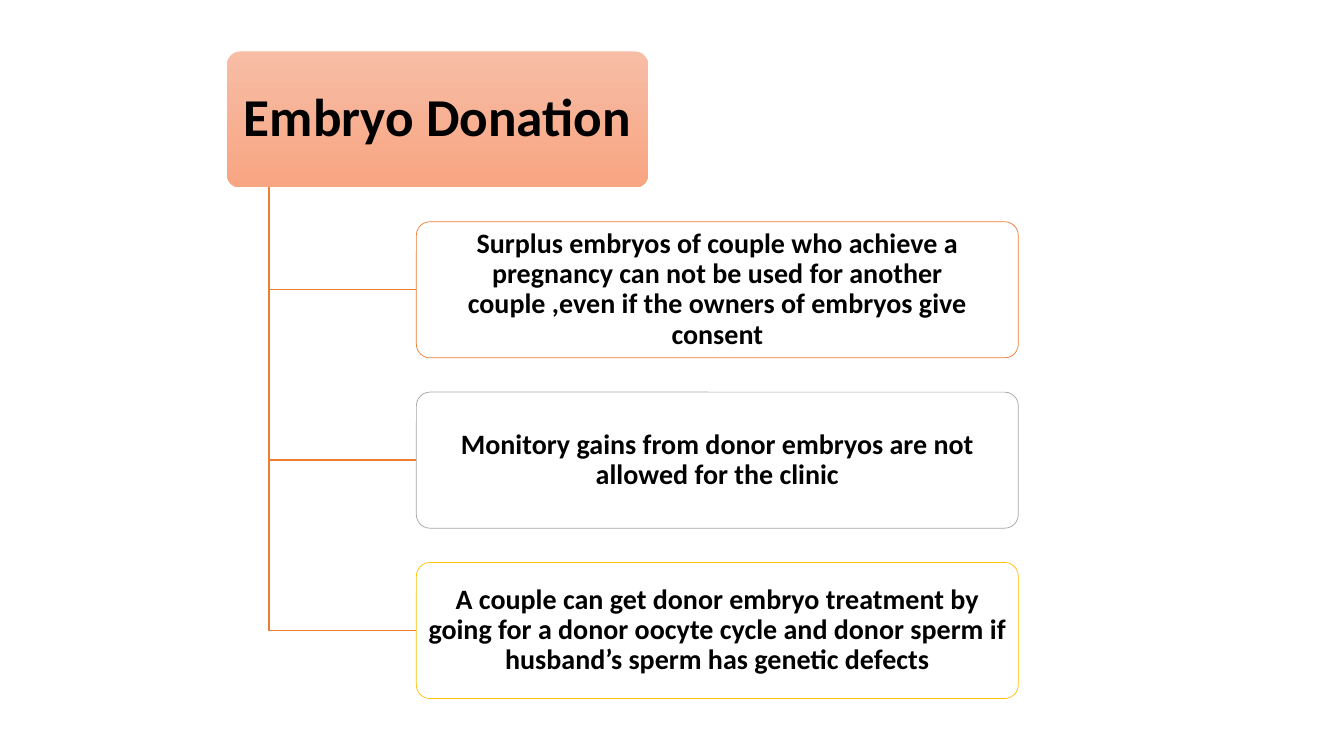
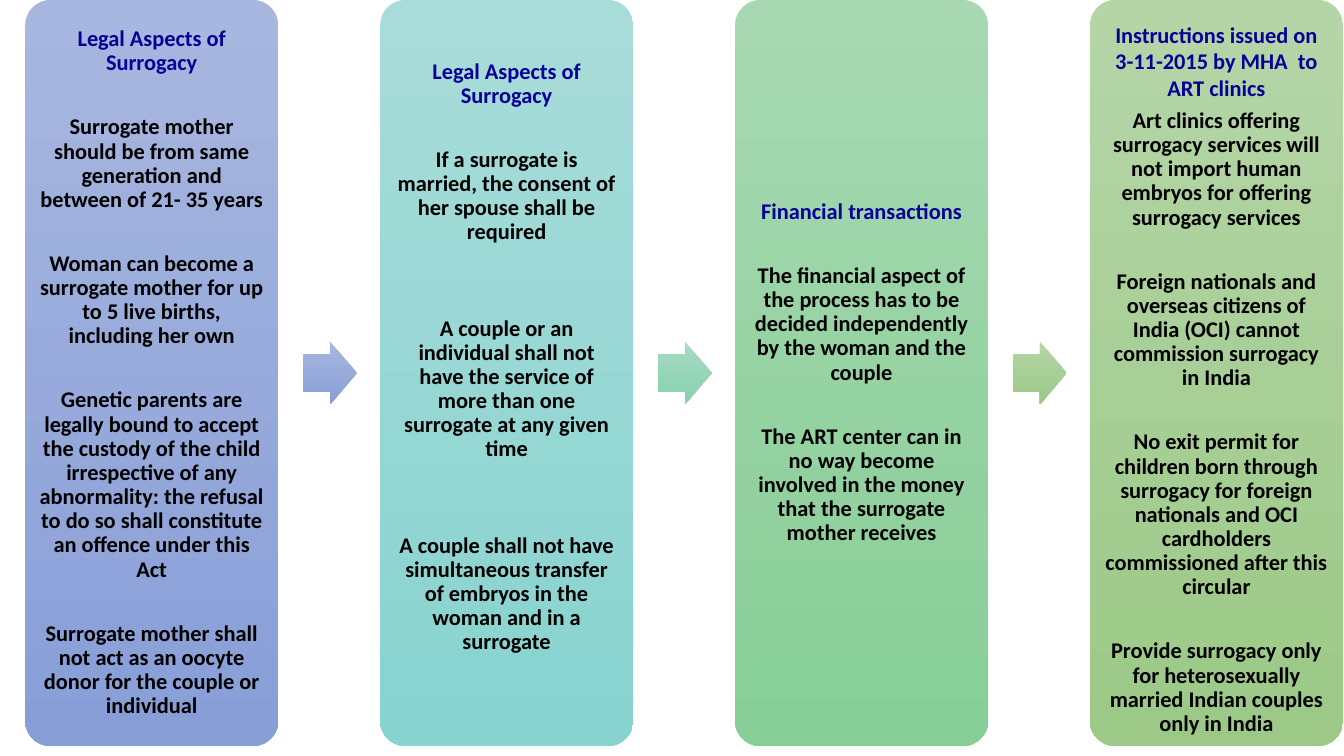
from pptx import Presentation
from pptx.dml.color import RGBColor
from pptx.enum.shapes import MSO_SHAPE
from pptx.enum.text import MSO_ANCHOR, PP_ALIGN
from pptx.util import Inches, Pt

FONT = "Calibri"
BLACK, WHITE, NAVY, ORANGE = "000000", "FFFFFF", "080198", "ED7D31"
PEACH = ("F7BDA5", "F8A582")
BLUE = ("A8B7DF", "889ED7")
TEAL = ("A8DCD9", "87D3CF")
MINT = ("A8DAC3", "87D1AF")
GREEN = ("A7D8B1", "87CE96")
OLIVE = ("B5D5A7", "9CC987")
CORNER = 0.1
TIGHT, SINGLE_GAP, DOUBLE_GAP = 5.6, 28.5, 51.5  # points between paragraphs

DONATION_TITLE = "Embryo Donation"
DONATION_RULES = [
    ("Surplus embryos of couple who achieve a pregnancy can not be used for another "
     "couple ,even if the owners of embryos give consent", ORANGE),
    ("Monitory gains from donor embryos are not allowed for the clinic", "A5A5A5"),
    ("A couple can get donor embryo treatment by going for a donor oocyte cycle and "
     "donor sperm if husband’s sperm has genetic defects", "FFC000"),
]

# heading_gap and gap are in points, top and bottom are panel insets in inches
SURROGACY_PANELS = [
    dict(colors=BLUE, heading="Legal Aspects of Surrogacy", heading_spacing=0.9,
         heading_gap=SINGLE_GAP, gap=SINGLE_GAP, top=0.07, bottom=0.07,
         points=[
             "Surrogate mother should be from same generation and between of 21- 35 years",
             "Woman can become a surrogate mother for up to 5 live births, "
             "including her own",
             "Genetic parents are legally bound to accept the custody of the child "
             "irrespective of any abnormality: the refusal to do so shall constitute "
             "an offence under this Act",
             "Surrogate mother shall not act as an oocyte donor for the couple or "
             "individual",
         ]),
    dict(colors=TEAL, heading="Legal Aspects of Surrogacy", heading_spacing=0.9,
         heading_gap=SINGLE_GAP, gap=DOUBLE_GAP, top=0.07, bottom=0.38,
         points=[
             "If a surrogate is married, the consent of her spouse shall be required",
             "A couple or an individual shall not have the service of more than one "
             "surrogate at any given time",
             "A couple shall not have simultaneous transfer of embryos in the woman "
             "and in a surrogate",
         ]),
    dict(colors=GREEN, heading="Financial transactions", heading_spacing=0.9,
         heading_gap=SINGLE_GAP, gap=SINGLE_GAP, top=0.07, bottom=0.07,
         points=[
             "The financial aspect of the process has to be decided independently by "
             "the woman and the couple",
             "The ART center can in no way become involved in the money that the "
             "surrogate mother receives",
         ]),
    dict(colors=OLIVE, heading="Instructions issued on 3-11-2015 by MHA  to ART clinics",
         heading_spacing=1.0, heading_gap=TIGHT, gap=SINGLE_GAP, top=0.11, bottom=0,
         points=[
             "Art clinics offering surrogacy services will not import human embryos "
             "for offering surrogacy services",
             "Foreign nationals and overseas citizens of India (OCI) cannot commission "
             "surrogacy in India",
             "No exit permit for children born through surrogacy for foreign nationals "
             "and OCI cardholders commissioned after this circular",
             "Provide surrogacy only for heterosexually married Indian couples only "
             "in India",
         ]),
]
ARROW_COLORS = [BLUE, MINT, OLIVE]


def rgb(color):
    return RGBColor.from_string(color)


def add_block(slide, kind, left, top, width, height, fill, outline=None):
    """Add a preset shape; fill is one colour or a (top, bottom) gradient pair."""
    block = slide.shapes.add_shape(
        kind, Inches(left), Inches(top), Inches(width), Inches(height))
    block.shadow.inherit = False
    if isinstance(fill, tuple):
        block.fill.gradient()
        block.fill.gradient_angle = 270
        for stop, color in zip(block.fill.gradient_stops, fill):
            stop.color.rgb = rgb(color)
    else:
        block.fill.solid()
        block.fill.fore_color.rgb = rgb(fill)
    if outline:
        block.line.color.rgb = rgb(outline)
        block.line.width = Pt(0.5)
    else:
        block.line.fill.background()
    return block


def add_rounded(slide, *place_and_style):
    block = add_block(slide, MSO_SHAPE.ROUNDED_RECTANGLE, *place_and_style)
    block.adjustments[0] = CORNER
    return block


def set_insets(block, side, top, bottom):
    frame = block.text_frame
    frame.word_wrap = True
    frame.vertical_anchor = MSO_ANCHOR.MIDDLE
    frame.margin_left = frame.margin_right = Inches(side)
    frame.margin_top, frame.margin_bottom = Inches(top), Inches(bottom)


def write(paragraph, text, size, color=BLACK, spacing=0.9, before=0):
    paragraph.text = text
    paragraph.alignment = PP_ALIGN.CENTER
    paragraph.line_spacing = spacing
    if before:
        paragraph.space_before = Pt(before)
    paragraph.font.name = FONT
    paragraph.font.size = Pt(size)
    paragraph.font.bold = True
    paragraph.font.color.rgb = rgb(color)


def add_elbow(slide, x, y, end_x, end_y):
    """Draw a line down from (x, y), then right to (end_x, end_y)."""
    builder = slide.shapes.build_freeform(Inches(x), Inches(y))
    builder.add_line_segments(
        [(Inches(x), Inches(end_y)), (Inches(end_x), Inches(end_y))], close=False)
    elbow = builder.convert_to_shape()
    elbow.shadow.inherit = False
    elbow.fill.background()
    elbow.line.color.rgb = rgb(ORANGE)
    elbow.line.width = Pt(1)


def build_donation(slide):
    left, top, width, height = 2.25, 0.51, 4.18, 1.35
    rule_left, rule_width, pitch = 4.13, 5.97, 1.69
    title = add_rounded(slide, left, top, width, height, PEACH)
    set_insets(title, 0.08, 0.05, 0.05)
    write(title.text_frame.paragraphs[0], DONATION_TITLE, 38)
    for row, (text, outline) in enumerate(DONATION_RULES, 1):
        rule_top = top + row * pitch
        add_elbow(slide, left + width / 10, top + height,
                  rule_left, rule_top + height / 2)
        rule = add_rounded(slide, rule_left, rule_top, rule_width, height, WHITE, outline)
        set_insets(rule, 0.04, 0.03, 0.03)
        write(rule.text_frame.paragraphs[0], text, 20)


def build_surrogacy(slide):
    left, width, height, pitch = 0.25, 2.51, 7.4, 3.52
    arrow_gap, arrow_width, arrow_height = 0.25, 0.53, 0.62
    for column, panel in enumerate(SURROGACY_PANELS):
        panel_left = left + column * pitch
        block = add_rounded(slide, panel_left, 0, width, height, panel["colors"])
        set_insets(block, 0.07, panel["top"], panel["bottom"])
        frame = block.text_frame
        write(frame.paragraphs[0], panel["heading"], 16, NAVY, panel["heading_spacing"])
        before = panel["heading_gap"]
        for point in panel["points"]:
            write(frame.add_paragraph(), point, 16, before=before)
            before = panel["gap"]
        if column < len(ARROW_COLORS):
            arrow = add_block(slide, MSO_SHAPE.RIGHT_ARROW,
                              panel_left + width + arrow_gap, (height - arrow_height) / 2,
                              arrow_width, arrow_height, ARROW_COLORS[column])
            arrow.adjustments[0] = 0.6
            arrow.adjustments[1] = 0.5


def main():
    deck = Presentation()
    deck.slide_width, deck.slide_height = Inches(13.33), Inches(7.5)
    for build in (build_donation, build_surrogacy):
        build(deck.slides.add_slide(deck.slide_layouts[6]))
    deck.save("out.pptx")


if __name__ == "__main__":
    main()
